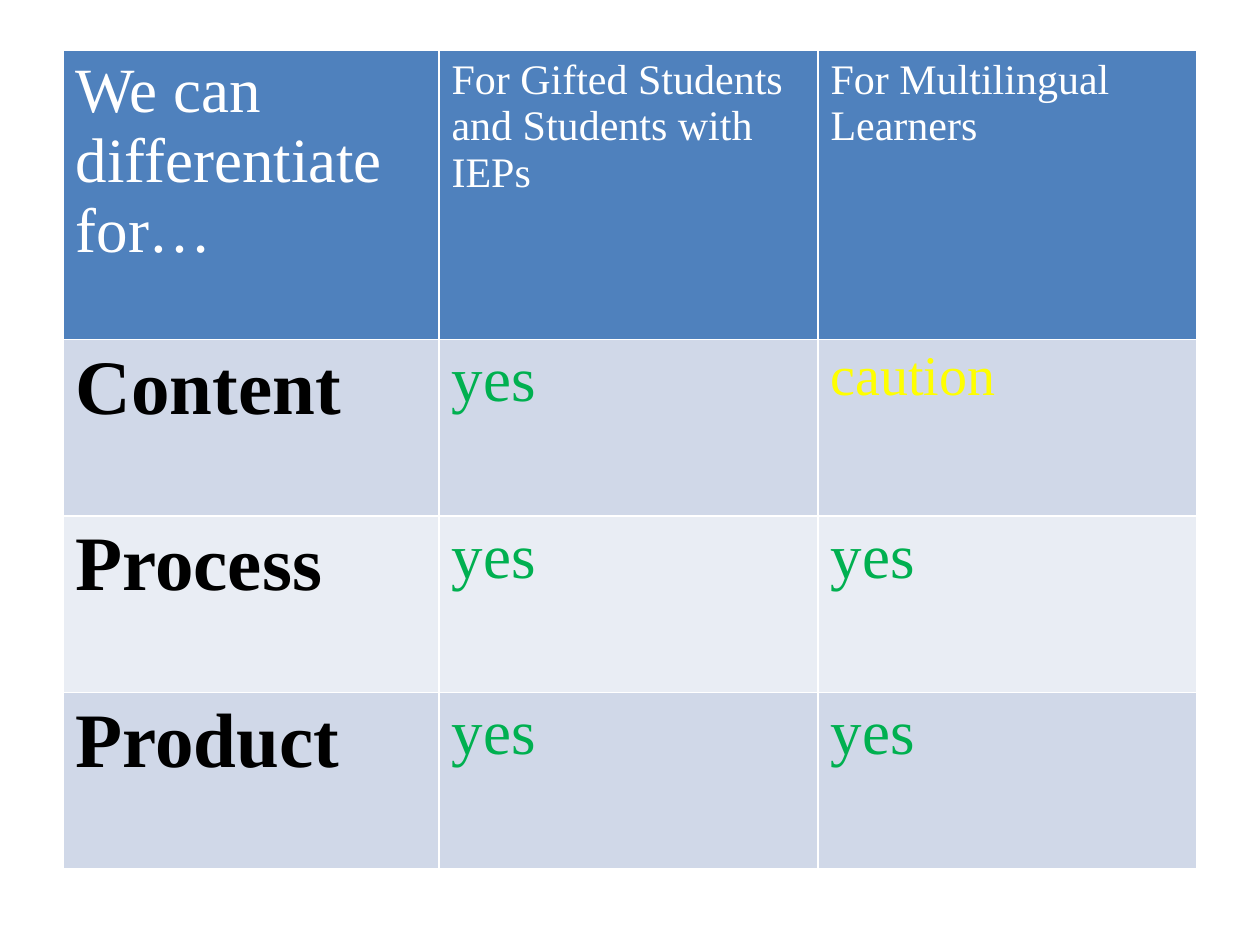
"""Build a slide with a table on what can be differentiated for which learners."""
from dataclasses import dataclass

from pptx import Presentation
from pptx import util as u
from pptx.dml import color as c


@dataclass(frozen=True)
class Theme:
    font: str = "Times New Roman"
    head: str = "4F81BD"
    bands: tuple = ("D0D8E8", "E9EDF4")
    white: str = "FFFFFF"
    black: str = "000000"
    green: str = "00B050"
    yellow: str = "FFFF00"
    small: int = 24
    warn: int = 32
    large: int = 36
    label: int = 44


look = Theme()
deck = Presentation()
deck.slide_width, deck.slide_height = u.Cm(25.4), u.Cm(19.05)
slide = deck.slides.add_slide(deck.slide_layouts[6])

title = (look.large, look.white, False)
group = (look.small, look.white, False)
label = (look.label, look.black, True)
yes = ("yes", (look.large, look.green, False))
rows = [
    [("We can differentiate for…", title),
     ("For Gifted Students and Students with IEPs", group),
     ("For Multilingual Learners", group)],
    [("Content", label), yes, ("caution", (look.warn, look.yellow, False))],
    [("Process", label), yes, yes],
    [("Product", label), yes, yes],
]
widths = [7.58, 7.64, 7.64]
heights = [5.82] + [3.56] * 3

grid = slide.shapes.add_table(
    len(rows), len(widths), u.Cm(1.27), u.Cm(1.02),
    u.Cm(sum(widths)), u.Cm(sum(heights))).table
for col, width in zip(grid.columns, widths):
    col.width = u.Cm(width)
for row, height in zip(grid.rows, heights):
    row.height = u.Cm(height)

for i, row in enumerate(rows):
    shade = look.bands[(i - 1) % 2] if i else look.head
    for j, (words, (size, ink, bold)) in enumerate(row):
        cell = grid.cell(i, j)
        cell.fill.solid()
        cell.fill.fore_color.rgb = c.RGBColor.from_string(shade)
        run = cell.text_frame.paragraphs[0].add_run()
        run.text = words
        run.font.name = look.font
        run.font.size = u.Pt(size)
        run.font.bold = bold
        run.font.color.rgb = c.RGBColor.from_string(ink)

deck.save("out.pptx")
